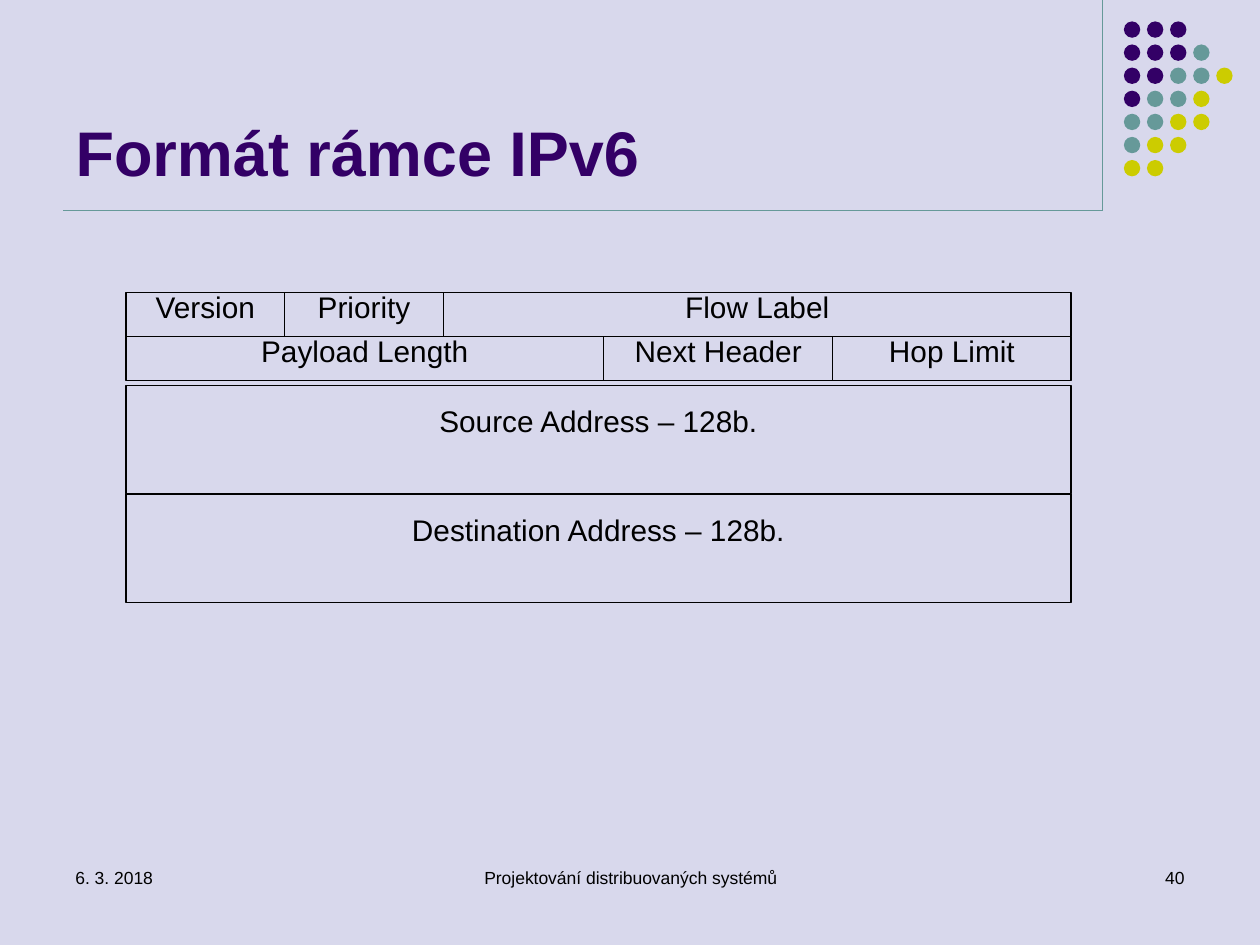
"""Builds the slide on the IPv6 frame format."""
from lxml import etree
from pptx import Presentation
from pptx.dml.color import RGBColor
from pptx.enum.shapes import MSO_CONNECTOR, MSO_SHAPE
from pptx.enum.text import MSO_ANCHOR, PP_ALIGN
from pptx.oxml.ns import qn
from pptx.util import Inches, Pt

LEFT, CENTER, RIGHT = PP_ALIGN.LEFT, PP_ALIGN.CENTER, PP_ALIGN.RIGHT
TOP, BOTTOM = MSO_ANCHOR.TOP, MSO_ANCHOR.BOTTOM
RECT, OVAL, STRAIGHT = MSO_SHAPE.RECTANGLE, MSO_SHAPE.OVAL, MSO_CONNECTOR.STRAIGHT
COLORS = {
    "background": "D8D8EC",
    "purple": "330066",
    "teal": "669999",
    "yellow": "CCCC00",
    "black": "000000",
}


def color(name):
    return RGBColor.from_string(COLORS[name])


def write(sp, text, size, align, ink="black", bold=False, anchor=TOP, inset=(0.1, 0.05)):
    tf = sp.text_frame
    frame_format = {
        "word_wrap": True,
        "vertical_anchor": anchor,
        "margin_left": Inches(inset[0]),
        "margin_right": Inches(inset[0]),
        "margin_top": Inches(inset[1]),
        "margin_bottom": Inches(inset[1]),
    }
    for name, value in frame_format.items():
        setattr(tf, name, value)
    p = tf.paragraphs[0]
    p.alignment = align
    r = p.add_run()
    r.text = text
    for name, value in {"name": "Arial", "size": Pt(size), "bold": bold}.items():
        setattr(r.font, name, value)
    r.font.color.rgb = color(ink)


prs = Presentation()
prs.slide_width, prs.slide_height = Inches(10), Inches(7.5)
s = prs.slides.add_slide(prs.slide_layouts[5])
s.background.fill.solid()
s.background.fill.fore_color.rgb = color("background")

title = s.shapes.title
for name, value in {"left": 0.5, "top": 0.13, "width": 8.25, "height": 1.42}.items():
    setattr(title, name, Inches(value))
write(title, "Formát rámce IPv6", 36, LEFT, "purple", True, BOTTOM)

for x1, y1, x2, y2 in [(8.75, 0, 8.75, 1.67), (0.5, 1.67, 8.75, 1.67)]:
    line = s.shapes.add_connector(STRAIGHT, Inches(x1), Inches(y1), Inches(x2), Inches(y2))
    line.line.color.rgb = color("teal")
    line.line.width = Pt(0.75)
    etree.SubElement(line._element.spPr, qn("a:effectLst"))

dot_colors = {"P": "purple", "T": "teal", "Y": "yellow"}
dot_rows = ["PPP", "PPPT", "PPTTY", "PTTY", "TTYY", "TYY", "YY"]
pitch, diameter = Inches(0.55) // 3, Inches(0.13)
for row, letters in enumerate(dot_rows):
    for col, letter in enumerate(letters):
        x, y = Inches(8.92) + col * pitch, Inches(0.17) + row * pitch
        dot = s.shapes.add_shape(OVAL, x, y, diameter, diameter)
        dot.shadow.inherit = False
        dot.fill.solid()
        dot.fill.fore_color.rgb = color(dot_colors[letter])
        dot.line.fill.background()

header_rows = [
    (2.32, 0.35, -0.07, [("Version", 1.26), ("Priority", 1.26), ("Flow Label", 4.98)]),
    (2.67, 0.35, -0.07, [("Payload Length", 3.79), ("Next Header", 1.82), ("Hop Limit", 1.89)]),
    (3.06, 0.86, 0.1, [("Source Address – 128b.", 7.5)]),
    (3.92, 0.86, 0.1, [("Destination Address – 128b.", 7.5)]),
]
for top, height, label_offset, fields in header_rows:
    left = 1
    for text, width in fields:
        box = s.shapes.add_shape(RECT, Inches(left), Inches(top), Inches(width), Inches(height))
        box.shadow.inherit = False
        box.fill.background()
        box.line.color.rgb = color("black")
        box.line.width = Pt(0.75)
        label = s.shapes.add_textbox(
            Inches(left), Inches(top + label_offset), Inches(width), Inches(0.42))
        write(label, text, 17, CENTER, inset=(0.07, 0.04))
        left += width

footers = [
    ("6. 3. 2018", 0.5, 2.33, LEFT),
    ("Projektování distribuovaných systémů", 3.42, 3.17, CENTER),
    ("40", 7.17, 2.33, RIGHT),
]
for text, left, width, align in footers:
    footer = s.shapes.add_textbox(Inches(left), Inches(6.83), Inches(width), Inches(0.5))
    write(footer, text, 10, align)

prs.save("out.pptx")
